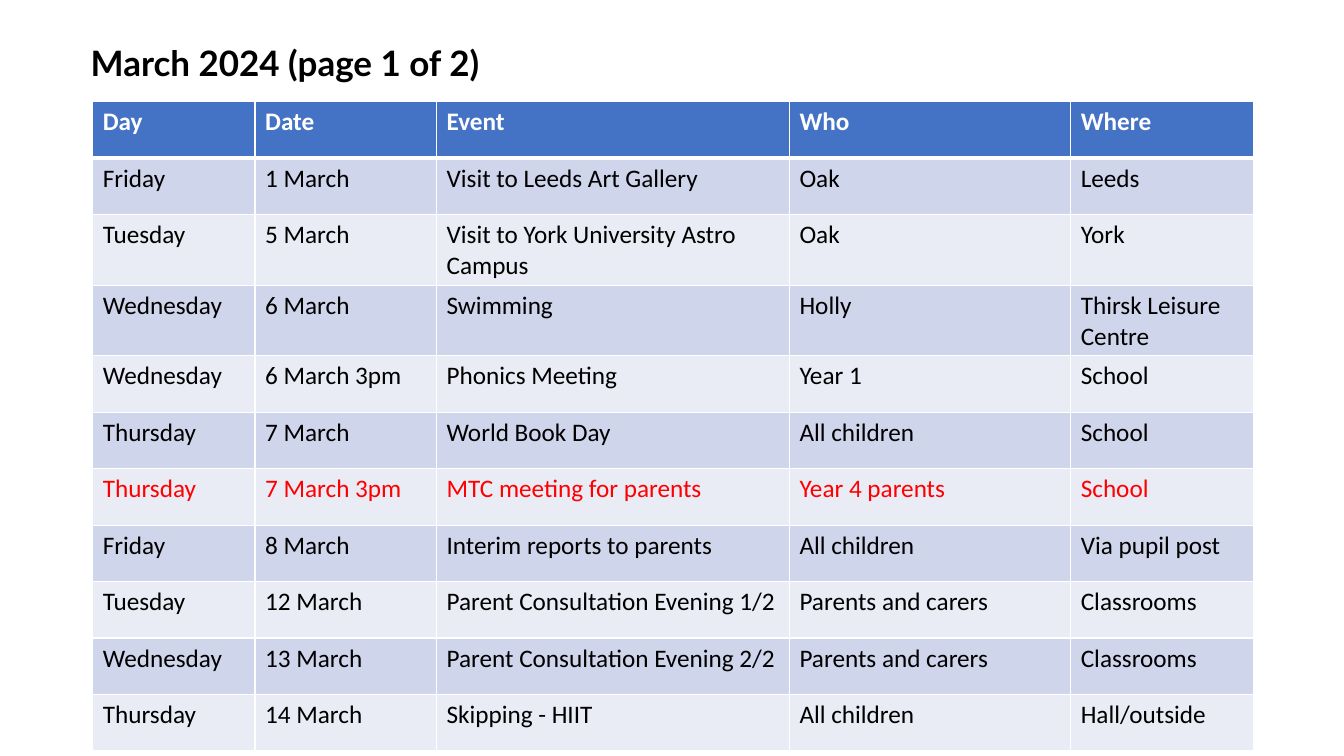
"""Build the school events calendar slide for March 2024."""
from dataclasses import dataclass

from lxml.etree import SubElement
from pptx import Presentation
from pptx.dml.color import RGBColor
from pptx.enum.text import MSO_ANCHOR, MSO_AUTO_SIZE, PP_ALIGN
from pptx.oxml.ns import qn
from pptx.util import Inches, Pt

TITLE = "March 2024 (page 1 of 2)"
HEADINGS = ("Day", "Date", "Event", "Who", "Where")
EVENTS = [
    ("Friday", "1 March", "Visit to Leeds Art Gallery", "Oak", "Leeds"),
    ("Tuesday", "5 March", "Visit to York University Astro Campus", "Oak", "York"),
    ("Wednesday", "6 March", "Swimming", "Holly", "Thirsk Leisure Centre"),
    ("Wednesday", "6 March 3pm", "Phonics Meeting", "Year 1", "School"),
    ("Thursday", "7 March", "World Book Day", "All children", "School"),
    ("Thursday", "7 March 3pm", "MTC meeting for parents", "Year 4 parents", "School"),
    ("Friday", "8 March", "Interim reports to parents", "All children", "Via pupil post"),
    ("Tuesday", "12 March", "Parent Consultation Evening 1/2", "Parents and carers", "Classrooms"),
    ("Wednesday", "13 March", "Parent Consultation Evening 2/2", "Parents and carers", "Classrooms"),
    ("Thursday", "14 March", "Skipping - HIIT", "All children", "Hall/outside"),
]
HIGHLIGHTED_DATES = {"7 March 3pm"}

SLIDE_SIZE = (13.33, 7.5)
TITLE_AREA = (0.8, 0.36, 4.45, 0.52)
TABLE_LEFT, TABLE_TOP = 0.92, 1.01
COLUMN_WIDTHS = (1.61, 1.8, 3.5, 2.79, 1.81)
ROW_HEIGHT = 0.56


@dataclass(frozen=True)
class Theme:
    """Colours, fonts and sizes of the slide."""
    title_font: str = "Lato"
    table_font: str = "Calibri"
    title_size: int = 25
    table_size: int = 18
    text: str = "000000"
    alert: str = "FF0000"
    white: str = "FFFFFF"
    header: str = "4472C4"
    bands: tuple = ("CFD5EA", "E9EBF5")
    rule: int = 1
    header_rule: int = 3


THEME = Theme()


def format_text(frame, font, size, color, bold):
    for para in frame.paragraphs:
        for span in para.runs:
            span.font.name = font
            span.font.size = Pt(size)
            span.font.bold = bold
            span.font.color.rgb = RGBColor.from_string(color)


def add_title(page):
    box = page.shapes.title
    box.left, box.top, box.width, box.height = map(Inches, TITLE_AREA)
    frame = box.text_frame
    frame.text = TITLE
    frame.word_wrap = True
    frame.auto_size = MSO_AUTO_SIZE.SHAPE_TO_FIT_TEXT
    frame.vertical_anchor = MSO_ANCHOR.TOP
    frame.paragraphs[0].alignment = PP_ALIGN.LEFT
    format_text(frame, THEME.title_font, THEME.title_size, THEME.text, True)


def add_borders(cell, top, bottom):
    properties = cell._tc.get_or_add_tcPr()
    widths = {"L": THEME.rule, "R": THEME.rule, "T": top, "B": bottom}
    for side, width in widths.items():
        line = SubElement(properties, qn(f"a:ln{side}"), w=str(Pt(width)))
        fill = SubElement(line, qn("a:solidFill"))
        SubElement(fill, qn("a:srgbClr"), val=THEME.white)


def row_style(index, row):
    if index == 0:
        return THEME.header, THEME.white
    color = THEME.alert if row[1] in HIGHLIGHTED_DATES else THEME.text
    return THEME.bands[(index - 1) % 2], color


def add_calendar(page):
    rows = [HEADINGS, *EVENTS]
    table = page.shapes.add_table(
        len(rows), len(HEADINGS), Inches(TABLE_LEFT), Inches(TABLE_TOP),
        Inches(sum(COLUMN_WIDTHS)), Inches(ROW_HEIGHT * len(rows)),
    ).table
    for column, width in zip(table.columns, COLUMN_WIDTHS):
        column.width = Inches(width)
    for index, row in enumerate(rows):
        table.rows[index].height = Inches(ROW_HEIGHT)
        fill, color = row_style(index, row)
        top = THEME.header_rule if index == 1 else THEME.rule
        bottom = THEME.header_rule if index == 0 else THEME.rule
        for column_index, text in enumerate(row):
            cell = table.cell(index, column_index)
            add_borders(cell, top, bottom)
            cell.fill.solid()
            cell.fill.fore_color.rgb = RGBColor.from_string(fill)
            cell.text_frame.text = text
            format_text(cell.text_frame, THEME.table_font, THEME.table_size, color, index == 0)


def main():
    deck = Presentation()
    deck.slide_width, deck.slide_height = map(Inches, SLIDE_SIZE)
    page = deck.slides.add_slide(deck.slide_layouts.get_by_name("Title Only"))
    add_title(page)
    add_calendar(page)
    deck.save("out.pptx")


if __name__ == "__main__":
    main()
